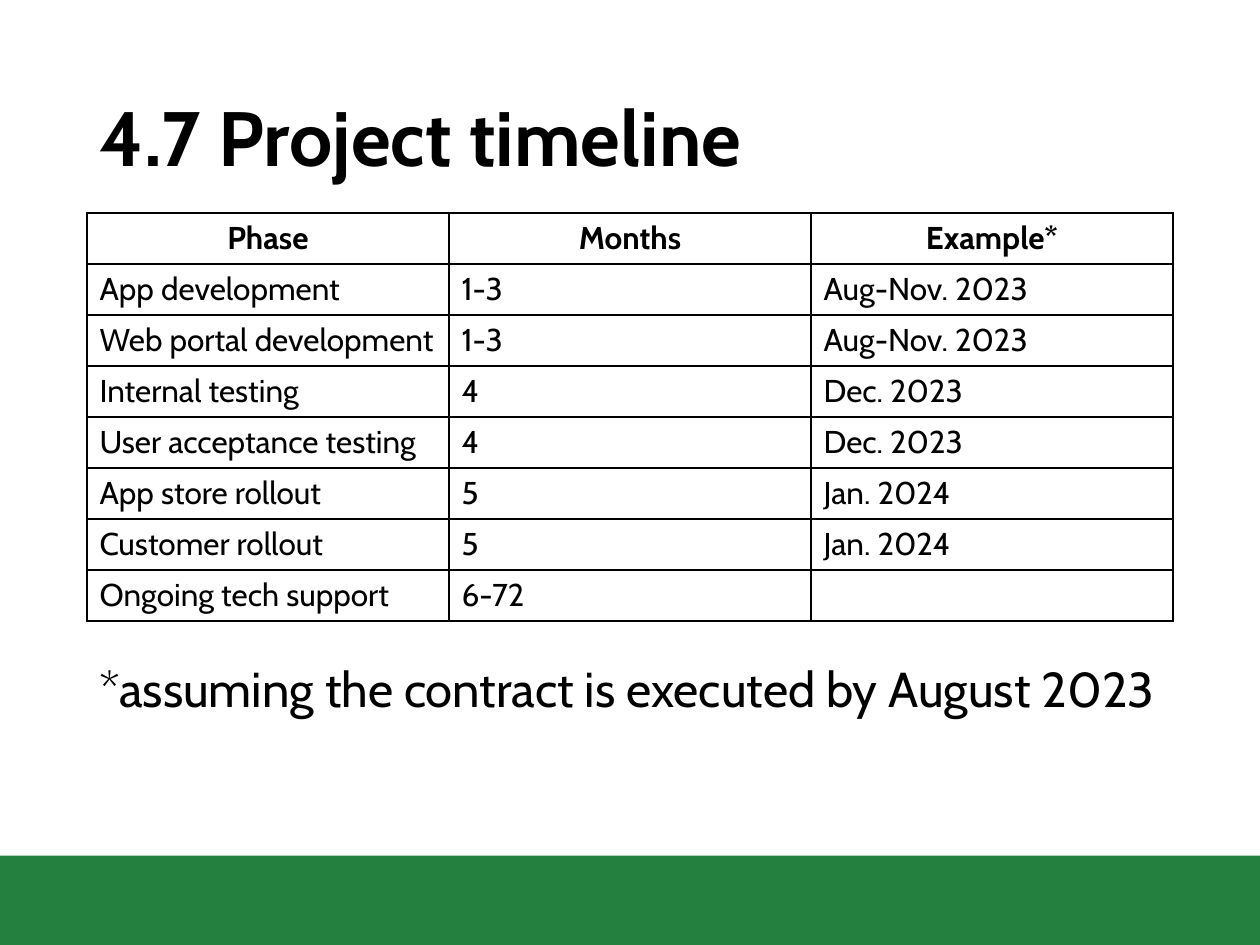
from dataclasses import dataclass

from lxml import etree
from pptx import Presentation
from pptx import util as u
from pptx.dml.color import RGBColor
from pptx.enum import shapes, text
from pptx.oxml.ns import qn

WIDTH, HEIGHT = u.Inches(10), u.Inches(7.5)


@dataclass(frozen=True)
class Theme:
    font: str = "Cabin"
    ink: str = "000000"
    paper: str = "FFFFFF"
    green: str = "23803F"
    title: int = 44
    note: int = 28
    cell: int = 18
    border: int = 1


THEME = Theme()

HEADERS = ("Phase", "Months", "Example*")
PHASES = (
    ("App development", "1-3", "Aug-Nov. 2023"),
    ("Web portal development", "1-3", "Aug-Nov. 2023"),
    ("Internal testing", "4", "Dec. 2023"),
    ("User acceptance testing", "4", "Dec. 2023"),
    ("App store rollout", "5", "Jan. 2024"),
    ("Customer rollout", "5", "Jan. 2024"),
    ("Ongoing tech support", "6-72", ""),
)


def box(left, top, width, height):
    return tuple(u.Inches(v) for v in (left, top, width, height))


def write(tf, words, size, bold=False, align=text.PP_ALIGN.LEFT, spacing=None):
    p = tf.paragraphs[0]
    p.alignment = align
    p.line_spacing = spacing
    p.font.size = u.Pt(size)
    if words:
        r = p.add_run()
        r.text = words
        r.font.name = THEME.font
        r.font.size = u.Pt(size)
        r.font.bold = bold
        r.font.color.rgb = RGBColor.from_string(THEME.ink)


def add_band(s, area):
    sp = s.shapes.add_shape(shapes.MSO_SHAPE.RECTANGLE, *area)
    sp.shadow.inherit = False
    sp.fill.solid()
    sp.fill.fore_color.rgb = RGBColor.from_string(THEME.green)
    sp.line.fill.background()


def add_text(s, area, words, anchor=text.MSO_ANCHOR.TOP, **fmt):
    tf = s.shapes.add_textbox(*area).text_frame
    tf.word_wrap = True
    tf.vertical_anchor = anchor
    write(tf, words, spacing=0.9, **fmt)


def style_cell(cell):
    """Borders go in before the fill, as the schema orders them."""
    tcPr = cell._tc.get_or_add_tcPr()
    for side in ("a:lnL", "a:lnR", "a:lnT", "a:lnB"):
        ln = etree.SubElement(tcPr, qn(side), w=str(u.Pt(THEME.border)))
        fill = etree.SubElement(ln, qn("a:solidFill"))
        etree.SubElement(fill, qn("a:srgbClr"), val=THEME.ink)
    cell.fill.solid()
    cell.fill.fore_color.rgb = RGBColor.from_string(THEME.paper)


def add_timeline(s, area, headers, phases):
    rows = (headers, *phases)
    table = s.shapes.add_table(len(rows), len(headers), *area).table
    table.horz_banding = False
    for col in table.columns:
        col.width = area[2] // len(headers)
    for i, (row, values) in enumerate(zip(table.rows, rows)):
        row.height = area[3] // len(rows)
        align = text.PP_ALIGN.LEFT if i else text.PP_ALIGN.CENTER
        for cell, words in zip(row.cells, values):
            style_cell(cell)
            write(cell.text_frame, words, THEME.cell, bold=i == 0, align=align)


def build_slide(prs):
    s = prs.slides.add_slide(prs.slide_layouts[6])
    margin, content = 0.69, 8.62
    add_band(s, box(0, 6.79, 10, 0.72))
    add_text(s, box(margin, 0.4, content, 1.45), "4.7 Project timeline",
             anchor=text.MSO_ANCHOR.MIDDLE, size=THEME.title, bold=True)
    add_text(s, box(margin, 5.23, content, 1.53),
             "*assuming the contract is executed by August 2023", size=THEME.note)
    add_timeline(s, box(margin, 1.69, content, 3.24), HEADERS, PHASES)


def main():
    prs = Presentation()
    prs.slide_width, prs.slide_height = WIDTH, HEIGHT
    build_slide(prs)
    prs.save("out.pptx")


if __name__ == "__main__":
    main()
